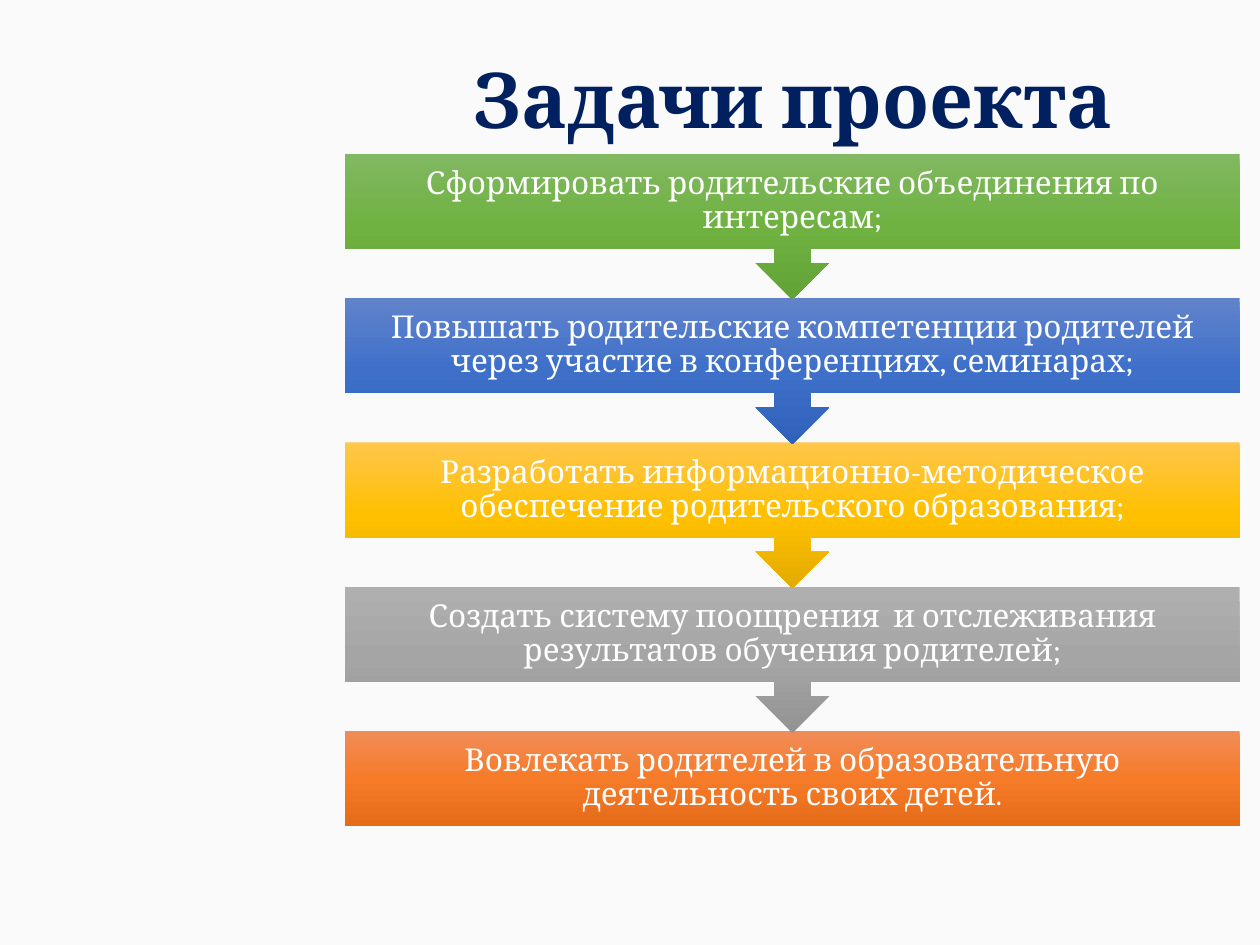
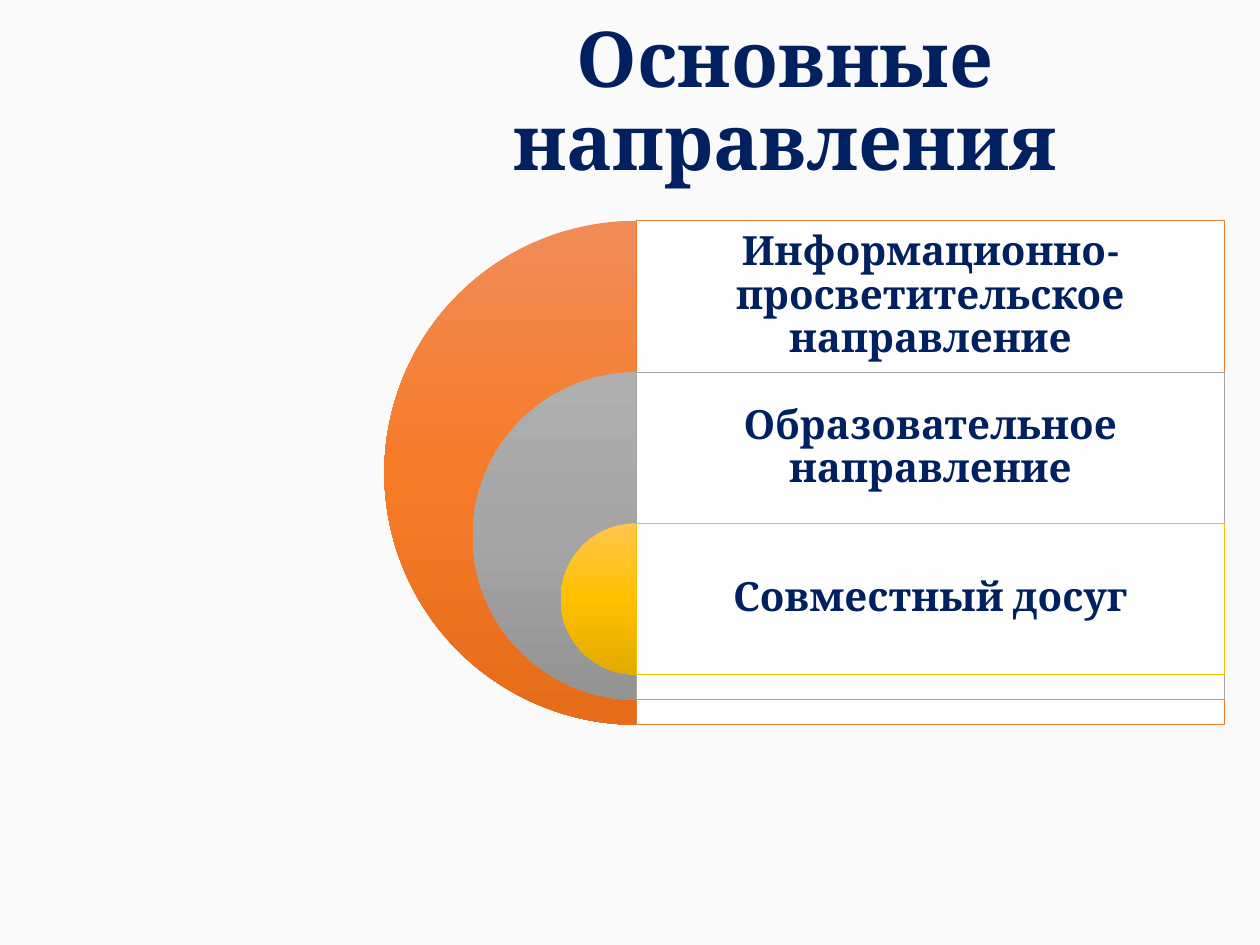
from copy import deepcopy

from lxml import etree
from pptx import Presentation
from pptx.dml.color import RGBColor
from pptx.enum.shapes import MSO_SHAPE
from pptx.enum.text import MSO_ANCHOR, PP_ALIGN
from pptx.oxml.ns import qn
from pptx.util import Cm, Pt

RECT = MSO_SHAPE.RECTANGLE
ARROW_BAR = MSO_SHAPE.DOWN_ARROW_CALLOUT
PIE = MSO_SHAPE.PIE
MIDDLE = MSO_ANCHOR.MIDDLE
CENTER = PP_ALIGN.CENTER

FONT = "Cambria"
NAVY, WHITE, PAPER = "002060", "FFFFFF", "FAFAFA"

# Gradients from top to bottom
ORANGE = ("F18C57", "F67B28", "E56C19")
GRAY = ("AFAFAF", "A5A5A5", "939393")
GOLD = ("FFC64B", "FFC000", "E3AB00")
BLUE = ("6183CB", "3E70CA", "3062BB")
GREEN = ("81B861", "6FB242", "62A336")

TASKS = [
    ("Сформировать родительские объединения по интересам;", GREEN),
    ("Повышать родительские компетенции родителей через участие "
     "в конференциях, семинарах;", BLUE),
    ("Разработать информационно-методическое обеспечение "
     "родительского образования;", GOLD),
    ("Создать систему поощрения  и отслеживания результатов "
     "обучения родителей;", GRAY),
    ("Вовлекать родителей в образовательную деятельность своих детей.",
     ORANGE),
]

DIRECTIONS = [
    ("Информационно-просветительское направление", ORANGE, "ED7D31"),
    ("Образовательное направление", GRAY, "A5A5A5"),
    ("Совместный досуг", GOLD, "FFC000"),
]


def rgb(value):
    return RGBColor.from_string(value)


class Deck:
    """Shared style and the slide being filled."""

    def __init__(self):
        self.prs = Presentation()
        self.prs.slide_width, self.prs.slide_height = Cm(25.4), Cm(19.05)
        self.s = None

    def slide(self, title):
        self.s = self.prs.slides.add_slide(self.prs.slide_layouts[6])
        self.s.background.fill.solid()
        self.s.background.fill.fore_color.rgb = rgb(PAPER)
        box = self.s.shapes.add_textbox(Cm(6.6), Cm(0.53), Cm(18.8), Cm(3.12))
        self.text(box, title, 44, NAVY, True, (0.25, 0.13, 0.25, 0.13))

    def text(self, sp, text, size, color, bold, insets):
        """Centred text; insets are left, top, right, bottom in cm."""
        tf = sp.text_frame
        tf.word_wrap = True
        tf.vertical_anchor = MIDDLE
        (tf.margin_left, tf.margin_top,
         tf.margin_right, tf.margin_bottom) = map(Cm, insets)
        p = tf.paragraphs[0]
        p.text = text
        p.alignment = CENTER
        p.line_spacing = 0.9
        p.font.name, p.font.size, p.font.bold = FONT, Pt(size), bold
        p.font.color.rgb = rgb(color)

    def shape(self, kind, x, y, w, h):
        sp = self.s.shapes.add_shape(kind, Cm(x), Cm(y), Cm(w), Cm(h))
        sp.shadow.inherit = False
        return sp

    def gradient_shape(self, kind, x, y, w, h, colors):
        sp = self.shape(kind, x, y, w, h)
        sp.line.fill.background()
        sp.fill.gradient()
        sp.fill.gradient_angle = 270
        stops = sp._element.spPr.find(".//" + qn("a:gsLst"))
        stops.insert(1, deepcopy(stops[0]))
        for i, (stop, color) in enumerate(zip(sp.fill.gradient_stops, colors)):
            stop.position = i / 2
            stop.color.rgb = rgb(color)
        return sp

    def half_disc(self, center_x, y, size, colors):
        sp = self.gradient_shape(PIE, center_x - size / 2, y, size, size, colors)
        sp.adjustments[0], sp.adjustments[1] = 54, 162  # left half

    def panel(self, x, y, w, h, line):
        sp = self.shape(RECT, x, y, w, h)
        sp.fill.solid()
        sp.fill.fore_color.rgb = rgb(WHITE)
        color = sp._element.spPr.find(qn("a:solidFill"))[0]
        etree.SubElement(color, qn("a:alpha"), val="90000")
        sp.line.color.rgb = rgb(line)
        sp.line.width = Pt(0.5)
        return sp


def tasks_slide(deck):
    deck.slide("Задачи проекта")
    top, step = 3.1, 2.91
    last = len(TASKS) - 1
    # Lower bars first, so each arrow tip lies over the next bar
    for i, (task, colors) in reversed(list(enumerate(TASKS))):
        kind, height = (RECT, 1.91) if i == last else (ARROW_BAR, 2.94)
        sp = deck.gradient_shape(kind, 6.96, top + i * step, 18.03, height, colors)
        deck.text(sp, task, 18, WHITE, False, (0.36,) * 4)


def directions_slide(deck):
    deck.slide("Основные \vнаправления ")
    center_x, top, row, outer = 12.83, 4.45, 3.05, 10.16
    shrink = (outer - row) / (len(DIRECTIONS) - 1)
    for i, (name, colors, line) in enumerate(DIRECTIONS):
        y, size = top + i * row, outer - i * shrink
        deck.half_disc(center_x, y, size, colors)
        sp = deck.panel(center_x, y, 11.86, size, line)
        # The name stays in the top row of its panel
        deck.text(sp, name, 23, NAVY, True, (0.25, 0.25, 0.25, size - row + 0.25))


def main():
    deck = Deck()
    tasks_slide(deck)
    directions_slide(deck)
    deck.prs.save("out.pptx")


if __name__ == "__main__":
    main()
